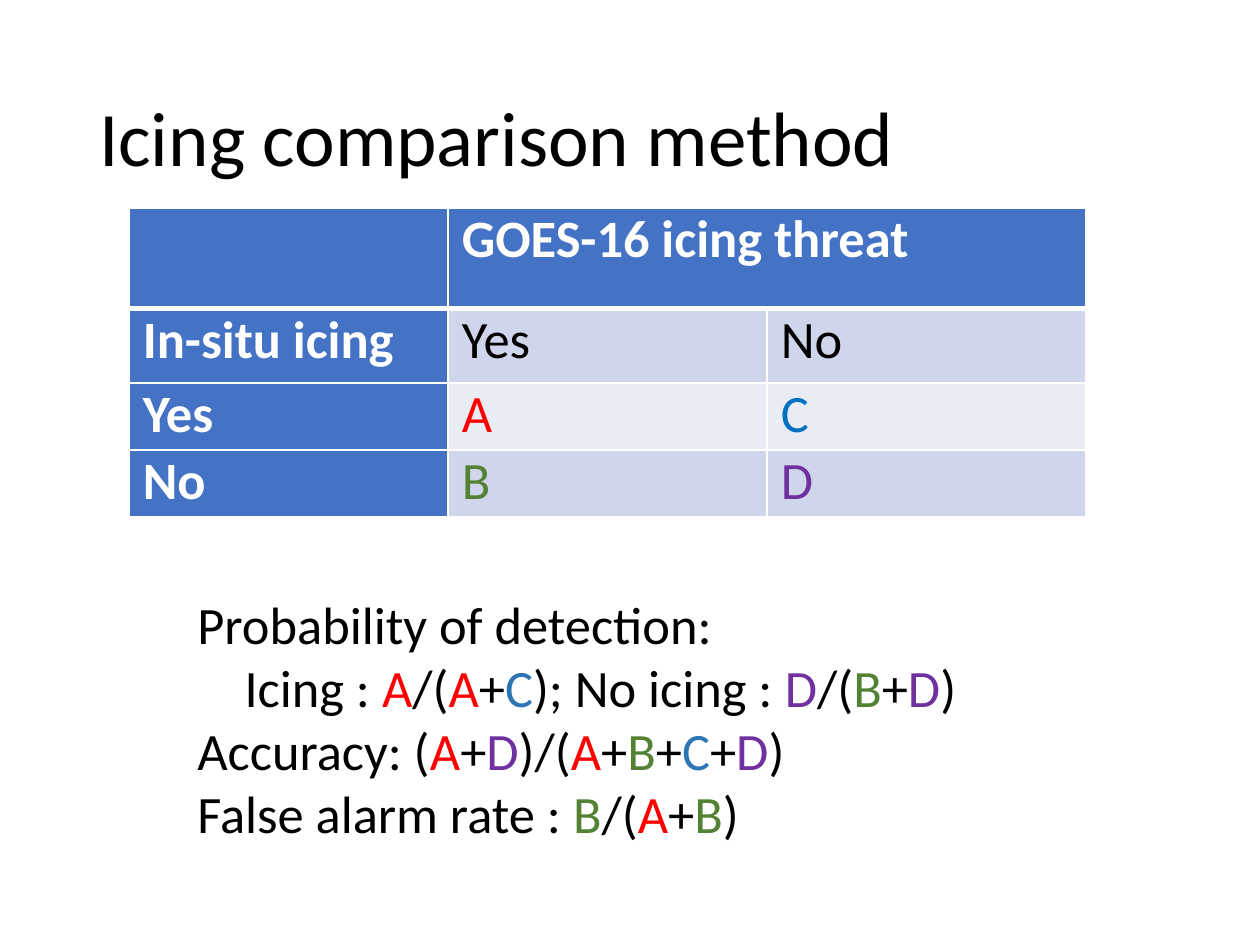
from itertools import groupby

from lxml import etree
from pptx import Presentation
from pptx import util as u
from pptx.dml.color import RGBColor
from pptx.enum import text
from pptx.oxml import ns

BLACK, WHITE, HEADER = "000000", "FFFFFF", "4472C4"
BANDS = ["CFD5EA", "E9EBF5"]
OUTCOMES = {"A": "FF0000", "B": "548235", "C": "2E75B6", "D": "7030A0"}
TABLE_OUTCOMES = {**OUTCOMES, "C": "0070C0"}


def rgb(hex_code):
    return RGBColor.from_string(hex_code)


class IcingSlide:
    font = "Calibri"
    body_size = 30
    title_size = 44

    def __init__(self, deck):
        self.slide = deck.slides.add_slide(deck.slide_layouts[6])

    def run(self, paragraph, words, color=BLACK, size=None, bold=False):
        run = paragraph.add_run()
        run.text = words
        run.font.name = self.font
        run.font.size = u.Pt(size or self.body_size)
        run.font.bold = bold
        run.font.color.rgb = rgb(color)

    def formula(self, paragraph, expression):
        for color, symbols in groupby(expression, lambda s: OUTCOMES.get(s, BLACK)):
            self.run(paragraph, "".join(symbols), color)

    def frame(self, left, top, width, height):
        box = self.slide.shapes.add_textbox(
            u.Cm(left), u.Cm(top), u.Cm(width), u.Cm(height))
        box.text_frame.word_wrap = True
        return box.text_frame

    def title(self, words, *place):
        heading = self.frame(*place)
        heading.vertical_anchor = text.MSO_ANCHOR.MIDDLE
        heading.paragraphs[0].line_spacing = 0.9
        self.run(heading.paragraphs[0], words, size=self.title_size)

    def definitions(self, lines, *place):
        body = self.frame(*place)
        body.auto_size = text.MSO_AUTO_SIZE.SHAPE_TO_FIT_TEXT
        for index, (level, parts) in enumerate(lines):
            paragraph = body.add_paragraph() if index else body.paragraphs[0]
            if level:
                paragraph.level = level
                paragraph._p.get_or_add_pPr().set("marL", str(u.Cm(0.95)))
            for label, expression in parts:
                self.run(paragraph, label)
                self.formula(paragraph, expression)

    def borders(self, cell, widths):
        properties = cell._tc.get_or_add_tcPr()
        for index, (side, width) in enumerate(widths.items()):
            line = etree.Element(ns.qn(f"a:ln{side}"), w=str(u.Pt(width)))
            fill = etree.SubElement(line, ns.qn("a:solidFill"))
            etree.SubElement(fill, ns.qn("a:srgbClr"), val=WHITE)
            properties.insert(index, line)

    def contingency(self, rows, left, top, column, heights):
        columns = len(rows[0])
        grid = self.slide.shapes.add_table(
            len(rows), columns, u.Cm(left), u.Cm(top),
            u.Cm(column * columns), u.Cm(sum(heights))).table
        for part in grid.columns:
            part.width = u.Cm(column)
        for r, (labels, height) in enumerate(zip(rows, heights)):
            grid.rows[r].height = u.Cm(height)
            for c, label in enumerate(labels):
                cell = grid.cell(r, c)
                heading = r == 0 or c == 0
                cell.fill.solid()
                cell.fill.fore_color.rgb = rgb(HEADER if heading else BANDS[(r - 1) % 2])
                self.borders(cell, {"L": 1, "R": 1, "T": 3 if r == 1 else 1,
                                    "B": 3 if r == 0 else 1})
                if label:
                    cell.margin_left = cell.margin_right = u.Cm(0.28)
                    cell.margin_top = cell.margin_bottom = 0
                    paragraph = cell.text_frame.paragraphs[0]
                    paragraph.alignment = text.PP_ALIGN.JUSTIFY
                    color = WHITE if heading else TABLE_OUTCOMES.get(label, BLACK)
                    self.run(paragraph, label, color, bold=heading)
        grid.cell(0, 1).merge(grid.cell(0, columns - 1))


def main():
    deck = Presentation()
    deck.slide_width, deck.slide_height = u.Cm(25.4), u.Cm(19.05)
    page = IcingSlide(deck)
    page.title("Icing comparison method", 1.75, 1.02, 21.9, 3.68)
    page.contingency(
        [["", "GOES-16 icing threat", ""],
         ["In-situ icing", "Yes", "No"],
         ["Yes", "A", "C"],
         ["No", "B", "D"]],
        2.6, 4.19, 6.43, [2.03, 1.5, 1.35, 1.35])
    page.definitions(
        [(0, [("Probability of detection:", "")]),
         (1, [("Icing : ", "A/(A+C)"), ("; No icing : ", "D/(B+D)")]),
         (0, [("Accuracy: ", "(A+D)/(A+B+C+D)")]),
         (0, [("False alarm rate : ", "B/(A+B)")])],
        3.73, 11.81, 17.12, 5.38)
    deck.save("out.pptx")


if __name__ == "__main__":
    main()
